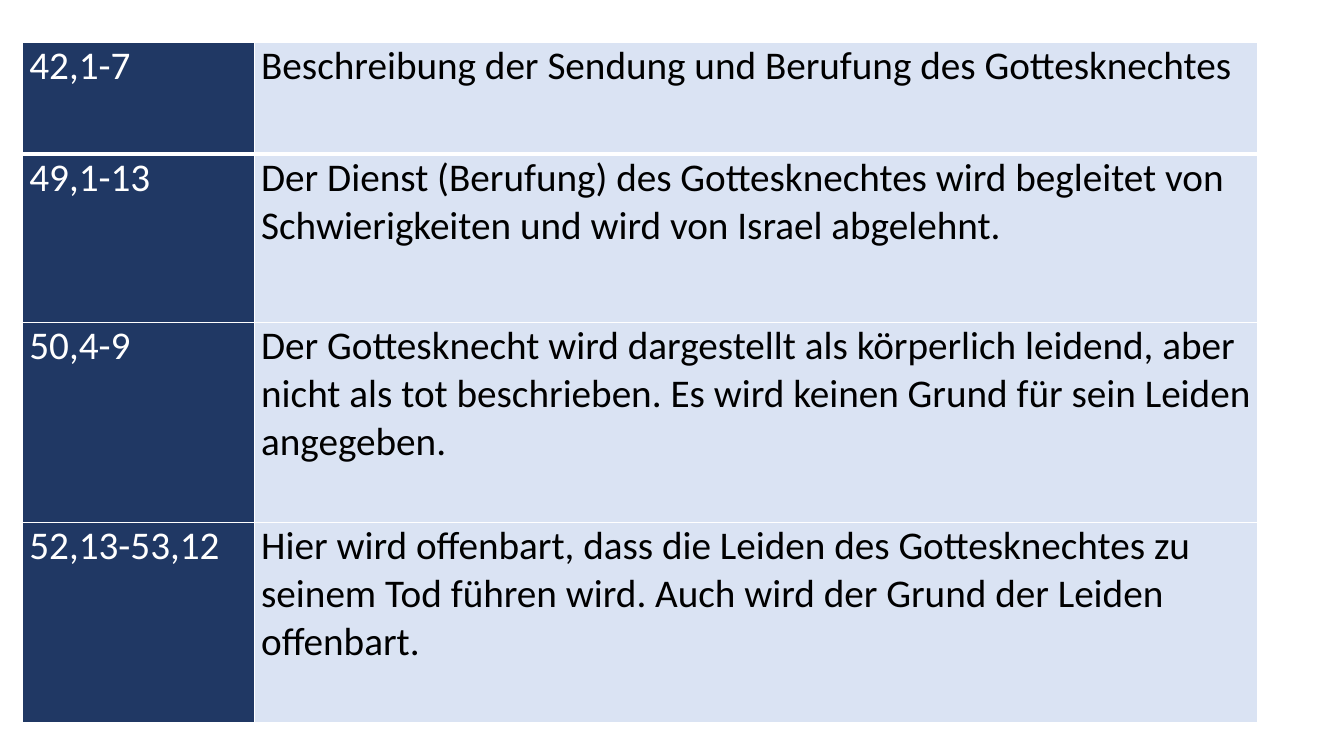
"""Build a slide with a table of the four Servant Songs and their content."""
import pptx
import pptx.util
import pptx.dml.color
import pptx.enum.text
import lxml.etree
import pptx.oxml.ns

Pt = pptx.util.Pt
RGBColor = pptx.dml.color.RGBColor

NAVY = RGBColor(0x20, 0x38, 0x64)
PALE_BLUE = RGBColor(0xDA, 0xE3, 0xF3)
WHITE = RGBColor(0xFF, 0xFF, 0xFF)
BLACK = RGBColor(0x00, 0x00, 0x00)

SONGS = [
    ("42,1-7", "Beschreibung der Sendung und Berufung des Gottesknechtes", 80),
    ("49,1-13", "Der Dienst (Berufung) des Gottesknechtes wird begleitet von "
     "Schwierigkeiten und wird von Israel abgelehnt.", 120),
    ("50,4-9", "Der Gottesknecht wird dargestellt als körperlich leidend, aber nicht als tot "
     "beschrieben. Es wird keinen Grund für sein Leiden angegeben.", 143),
    ("52,13-53,12", "Hier wird offenbart, dass die Leiden des Gottesknechtes zu seinem Tod "
     "führen wird. Auch wird der Grund der Leiden offenbart.", 143),
]
COLUMN_WIDTHS = (165.6, 717)
COLUMN_COLORS = ((NAVY, WHITE), (PALE_BLUE, BLACK))


def write_text(cell, text, *, color, size=28, font="Calibri"):
    cell.margin_left = cell.margin_right = Pt(5)
    cell.margin_top = cell.margin_bottom = Pt(0)
    cell.vertical_anchor = pptx.enum.text.MSO_ANCHOR.TOP
    run = cell.text_frame.paragraphs[0].add_run()
    run.text = text
    run.font.name = font
    run.font.size = Pt(size)
    run.font.bold = False
    run.font.color.rgb = color


def add_border(cell, side, width):
    qn = pptx.oxml.ns.qn
    properties = cell._tc.get_or_add_tcPr()
    line = lxml.etree.SubElement(properties, qn(f"a:ln{side}"), w=str(Pt(width)))
    fill = lxml.etree.SubElement(line, qn("a:solidFill"))
    lxml.etree.SubElement(fill, qn("a:srgbClr"), val=str(WHITE))


presentation = pptx.Presentation()
presentation.slide_width = Pt(960)
presentation.slide_height = Pt(540)
slide = presentation.slides.add_slide(presentation.slide_layouts[6])

total_height = sum(height for _, _, height in SONGS)
songs_table = slide.shapes.add_table(
    len(SONGS), len(COLUMN_WIDTHS), Pt(16), Pt(30.2), Pt(sum(COLUMN_WIDTHS)), Pt(total_height)
).table
songs_table.first_row = True
songs_table.first_col = True
songs_table.horz_banding = False

for column, width in zip(songs_table.columns, COLUMN_WIDTHS):
    column.width = Pt(width)

for row_index, (passage, summary, height) in enumerate(SONGS):
    songs_table.rows[row_index].height = Pt(height)
    border_widths = {"L": 1, "R": 1, "T": 3 if row_index == 1 else 1, "B": 3 if row_index == 0 else 1}
    for column_index, text in enumerate((passage, summary)):
        cell = songs_table.cell(row_index, column_index)
        background, text_color = COLUMN_COLORS[column_index]
        write_text(cell, text, color=text_color)
        for side, width in border_widths.items():
            add_border(cell, side, width)
        cell.fill.solid()
        cell.fill.fore_color.rgb = background

presentation.save("out.pptx")
